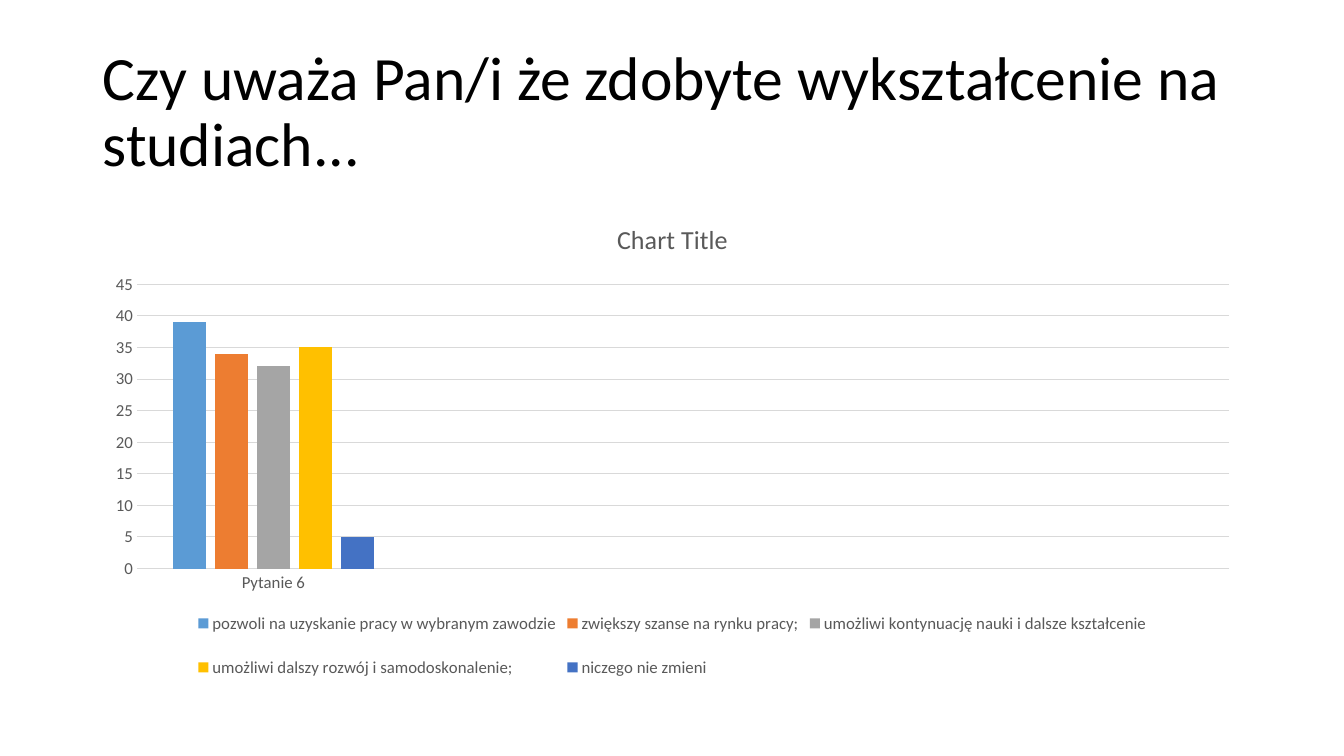
from pptx import Presentation
from pptx.chart.data import CategoryChartData
from pptx.dml.color import RGBColor
from pptx.enum.chart import XL_CHART_TYPE, XL_LEGEND_POSITION, XL_TICK_MARK
from pptx.enum.text import MSO_ANCHOR
from pptx.util import Inches, Pt


def rgb(value):
    return RGBColor.from_string(value)


def set_font(font, size, color):
    values = {"name": "Calibri", "size": Pt(size), "bold": False}
    for name, value in values.items():
        setattr(font, name, value)
    font.color.rgb = rgb(color)


GREY, GRID = "595959", "D9D9D9"
LEFT, WIDTH = Inches(0.92), Inches(11.5)
answers = [
    ("pozwoli na uzyskanie pracy w wybranym zawodzie", 39, "5B9BD5"),
    ("zwiększy szanse na rynku pracy;\n", 34, "ED7D31"),
    ("umożliwi kontynuację nauki i dalsze kształcenie", 32, "A5A5A5"),
    ("umożliwi dalszy rozwój i samodoskonalenie;", 35, "FFC000"),
    ("niczego nie zmieni", 5, "4472C4"),
]

prs = Presentation()
prs.slide_width = Inches(13.33)
prs.slide_height = Inches(7.5)
s = prs.slides.add_slide(prs.slide_layouts[6])

sp = s.shapes.add_textbox(LEFT, Inches(0.4), WIDTH, Inches(1.45))
tf = sp.text_frame
tf.word_wrap = True
tf.vertical_anchor = MSO_ANCHOR.MIDDLE
p = tf.paragraphs[0]
p.line_spacing = 0.9
r = p.add_run()
r.text = "Czy uważa Pan/i że zdobyte wykształcenie na studiach..."
set_font(r.font, 44, "000000")

data = CategoryChartData()
data.categories = ["Pytanie 6", "", "", ""]
for name, count, color in answers:
    data.add_series(name, [count, None, None, None])
chart = s.shapes.add_chart(
    XL_CHART_TYPE.COLUMN_CLUSTERED, LEFT, Inches(2), WIDTH, Inches(4.76), data
).chart
set_font(chart.font, 10, "000000")

chart.has_title = True
p = chart.chart_title.text_frame.paragraphs[0]
r = p.add_run()
r.text = "Chart Title"
set_font(r.font, 18.6, GREY)
chart.chart_title.include_in_layout = False

chart.has_legend = True
chart.legend.position = XL_LEGEND_POSITION.BOTTOM
chart.legend.include_in_layout = False
set_font(chart.legend.font, 12, GREY)

plot = chart.plots[0]
for name, value in {"gap_width": 219, "overlap": -27, "vary_by_categories": False}.items():
    setattr(plot, name, value)
for series, (name, count, color) in zip(plot.series, answers):
    series.format.fill.solid()
    series.format.fill.fore_color.rgb = rgb(color)
    series.invert_if_negative = False

for axis in (chart.category_axis, chart.value_axis):
    axis.major_tick_mark = XL_TICK_MARK.NONE
    axis.minor_tick_mark = XL_TICK_MARK.NONE
    set_font(axis.tick_labels.font, 12, GREY)

axis = chart.value_axis
axis.minimum_scale, axis.maximum_scale, axis.major_unit = 0, 45, 5
axis.has_major_gridlines = True
axis.format.line.fill.background()
for line in (chart.category_axis.format.line, axis.major_gridlines.format.line):
    line.width = Pt(0.75)
    line.color.rgb = rgb(GRID)

prs.save("out.pptx")
